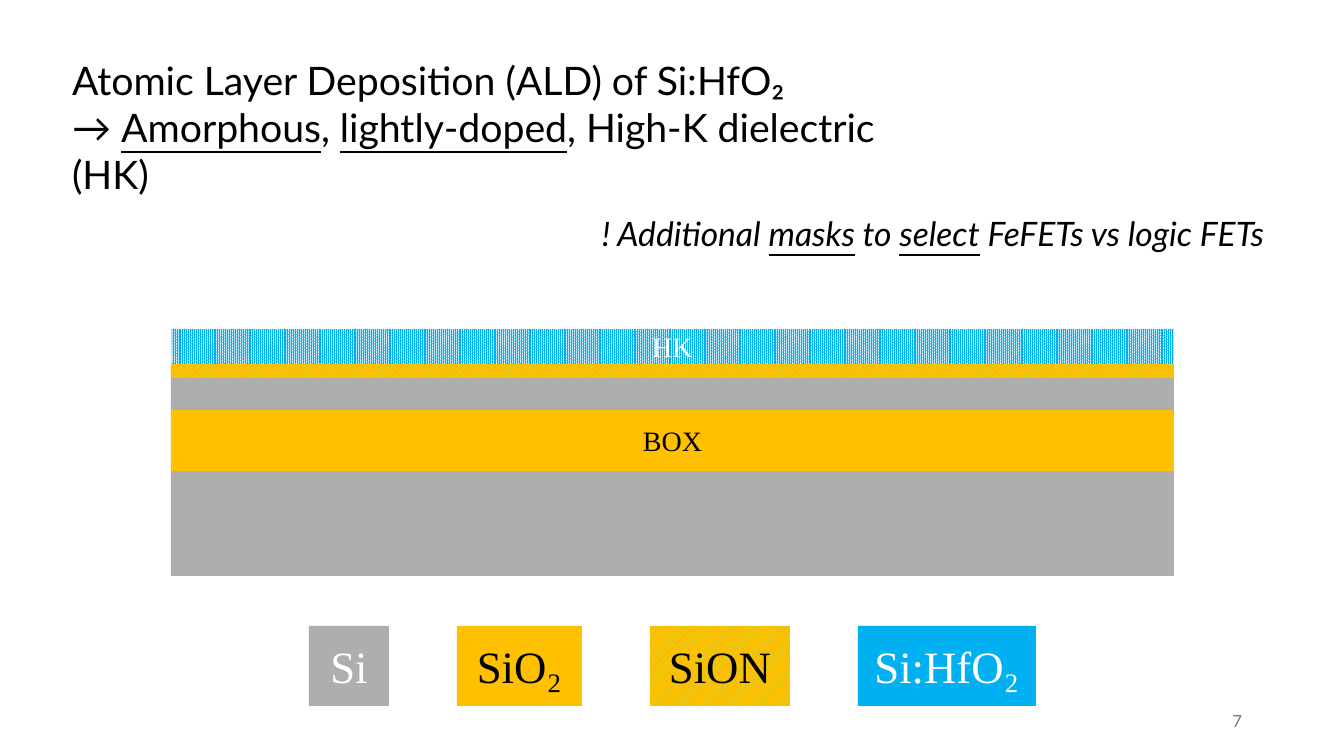
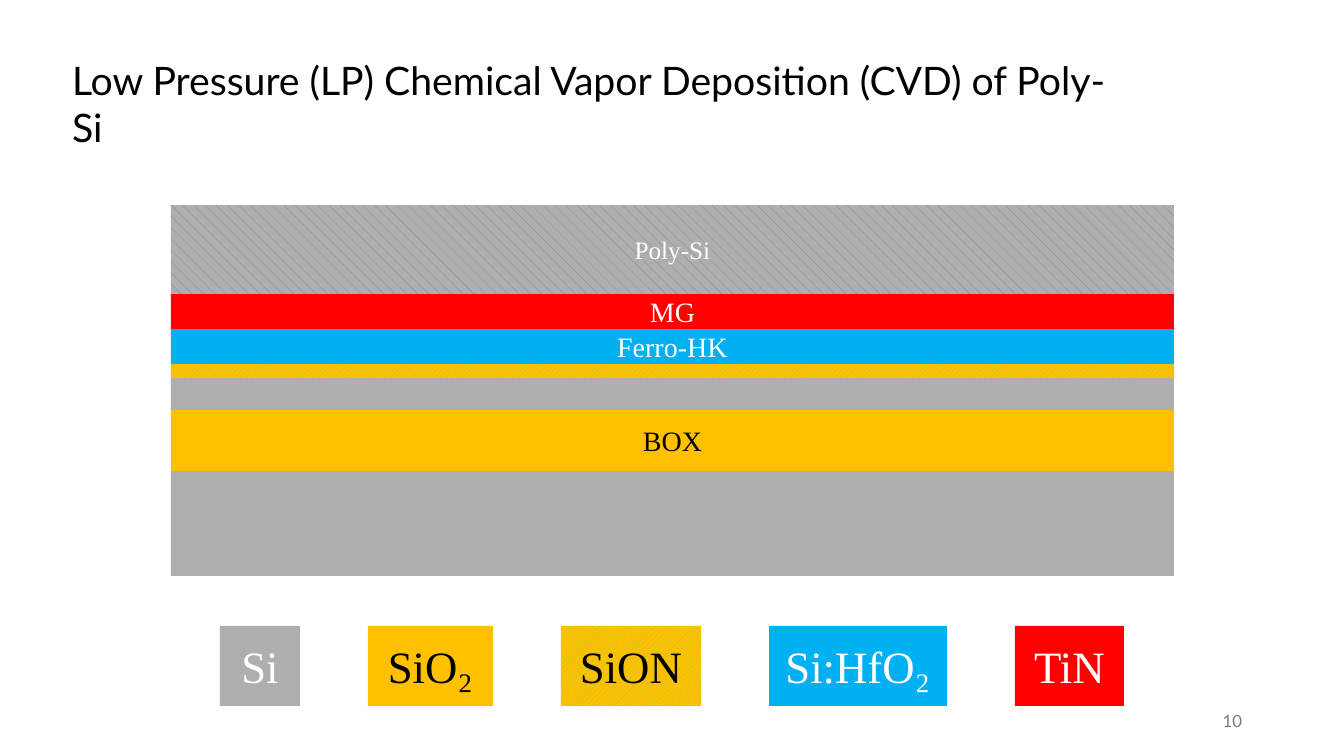
import collections

import pptx
import pptx.dml.color
import pptx.enum.dml
import pptx.enum.shapes
import pptx.enum.text
import pptx.util

RGB = pptx.dml.color.RGBColor
ALIGN = pptx.enum.text.PP_ALIGN
ANCHOR = pptx.enum.text.MSO_ANCHOR
PATTERN = pptx.enum.dml.MSO_PATTERN

PX_PER_INCH = 100.8
SLIDE_W, SLIDE_H = 1344, 756

BLACK = RGB(0x00, 0x00, 0x00)
WHITE = RGB(0xFF, 0xFF, 0xFF)
GREY = RGB(0xAE, 0xAE, 0xAE)
DARK_GREY = RGB(0x80, 0x80, 0x80)
NUMBER_GREY = RGB(0x79, 0x79, 0x79)
GOLD = RGB(0xFF, 0xC0, 0x00)
GREEN = RGB(0x92, 0xD0, 0x50)
BLUE = RGB(0x00, 0xB0, 0xF0)
RED = RGB(0xFF, 0x00, 0x00)

HEADING_FONT = "Lato"
LABEL_FONT = "Times New Roman"

Material = collections.namedtuple("Material", "color ink pattern back", defaults=(None, None))
SILICON = Material(GREY, WHITE)
OXIDE = Material(GOLD, BLACK)
OXYNITRIDE = Material(GREEN, BLACK, PATTERN.WIDE_UPWARD_DIAGONAL, GOLD)
AMORPHOUS_HK = Material(BLUE, WHITE, PATTERN.PERCENT_90, WHITE)
FERRO_HK = Material(BLUE, WHITE)
METAL = Material(RED, WHITE)
POLY = Material(DARK_GREY, WHITE, PATTERN.SHINGLE, GREY)

BASE_LAYERS = [
    (SILICON, 105, "", 20),
    (OXIDE, 61, "BOX", 20),
    (SILICON, 32, "", 20),
    (OXYNITRIDE, 14, "", 20),
]
BASE_LEGEND = [
    (SILICON, 80, "Si"),
    (OXIDE, 125, "SiO₂"),
    (OXYNITRIDE, 140, "SiON"),
    (FERRO_HK, 178, "Si:HfO₂"),
]


def px(length):
    return pptx.util.Emu(round(length * 914400 / PX_PER_INCH))


def write(frame, paragraphs, size, color, font, align, italic=False):
    for index, pieces in enumerate(paragraphs):
        paragraph = frame.add_paragraph() if index else frame.paragraphs[0]
        paragraph.alignment = align
        for text, underlined in pieces:
            run = paragraph.add_run()
            run.text = text
            run.font.name = font
            run.font.size = pptx.util.Pt(size)
            run.font.color.rgb = color
            run.font.italic = italic
            run.font.underline = underlined


def add_block(shapes, material, box, label, size):
    block = shapes.add_shape(pptx.enum.shapes.MSO_SHAPE.RECTANGLE, *map(px, box))
    block.shadow.inherit = False
    block.line.fill.background()
    if material.pattern is None:
        block.fill.solid()
    else:
        block.fill.patterned()
        block.fill.pattern = material.pattern
        block.fill.back_color.rgb = material.back
    block.fill.fore_color.rgb = material.color
    if label:
        block.text_frame.vertical_anchor = ANCHOR.MIDDLE
        write(block.text_frame, [[(label, False)]], size, material.ink, LABEL_FONT, ALIGN.CENTER)


def add_title(slide, paragraphs, box):
    title = slide.shapes.title
    title.left, title.top, title.width, title.height = map(px, box)
    frame = title.text_frame
    frame.auto_size = pptx.enum.text.MSO_AUTO_SIZE.NONE
    frame.word_wrap = True
    frame.vertical_anchor = ANCHOR.TOP
    write(frame, paragraphs, 28, BLACK, HEADING_FONT, ALIGN.LEFT)


def add_right_text(slide, pieces, box, size, color, italic=False):
    frame = slide.shapes.add_textbox(*map(px, box)).text_frame
    frame.word_wrap = True
    frame.vertical_anchor = ANCHOR.MIDDLE
    write(frame, [pieces], size, color, HEADING_FONT, ALIGN.RIGHT, italic)


def add_layer_stack(slide, layers, left, bottom, width):
    top = bottom
    for material, height, label, size in layers:
        top -= height
        add_block(slide.shapes, material, (left, top, width, height), label, size)


def add_legend(slide, entries, center, top, height, gap):
    legend = slide.shapes.add_group_shape()
    total = sum(width for _, width, _ in entries) + gap * (len(entries) - 1)
    left = center - total // 2
    for material, width, label in entries:
        add_block(legend.shapes, material, (left, top, width, height), label, 32)
        left += width + gap


def add_process_slide(deck, title, title_box, layers, legend, number):
    slide = deck.slides.add_slide(deck.slide_layouts[5])
    add_title(slide, title, title_box)
    add_layer_stack(slide, BASE_LAYERS + layers, 171, 576, 1003)
    add_legend(slide, BASE_LEGEND + legend, SLIDE_W // 2, 626, 80, 68)
    add_right_text(slide, [(number, False)], (950, 701, 302, 40), 12, NUMBER_GREY)
    return slide


def main():
    deck = pptx.Presentation()
    deck.slide_width, deck.slide_height = px(SLIDE_W), px(SLIDE_H)

    ald_title = [
        [("Atomic Layer Deposition (ALD) of Si:HfO₂", False)],
        [
            ("→ ", False),
            ("Amorphous", True),
            (", ", False),
            ("lightly-doped", True),
            (", High-K dielectric (HK)", False),
        ],
    ]
    ald = add_process_slide(
        deck, ald_title, (62, 51, 879, 105), [(AMORPHOUS_HK, 35, "HK", 20)], [], "7"
    )
    mask_note = [
        ("! Additional ", False),
        ("masks", True),
        (" to ", False),
        ("select", True),
        (" FeFETs vs logic FETs ", False),
    ]
    add_right_text(ald, mask_note, (552, 208, 730, 50), 24, BLACK, italic=True)

    cvd_title = [[("Low Pressure (LP) Chemical Vapor Deposition (CVD) of Poly-Si", False)]]
    gate_layers = [
        (FERRO_HK, 35, "Ferro-HK", 20),
        (METAL, 35, "MG", 20),
        (POLY, 89, "Poly-Si", 18),
    ]
    add_process_slide(
        deck, cvd_title, (62, 51, 1063, 57), gate_layers, [(METAL, 109, "TiN")], "10"
    )

    deck.save("out.pptx")


if __name__ == "__main__":
    main()
